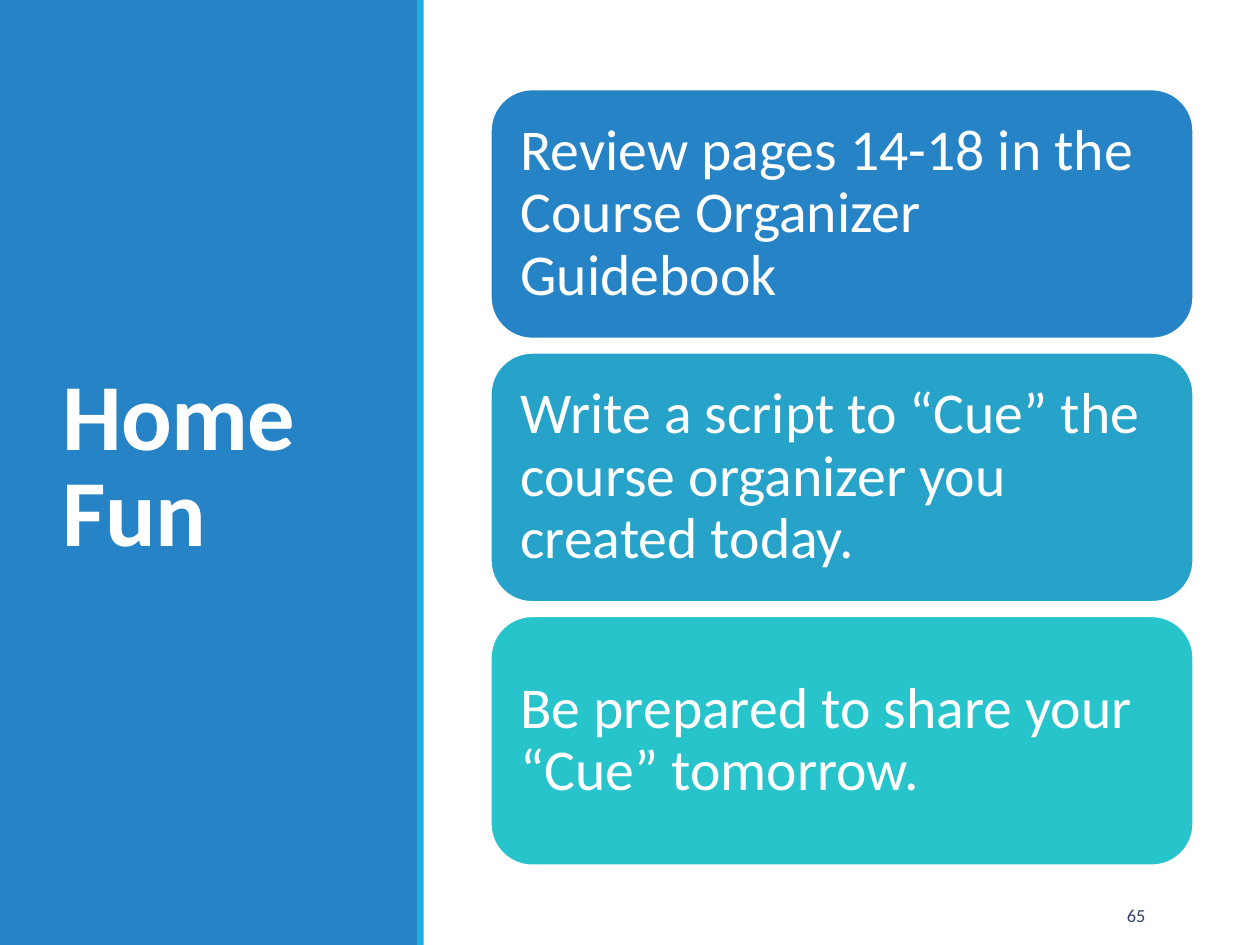
from pptx import Presentation
from pptx.dml.color import RGBColor
from pptx.enum import shapes, text
from pptx.util import Cm, Pt

WHITE = RGBColor(0xFF, 0xFF, 0xFF)
BLUE = RGBColor(0x26, 0x83, 0xC6)
SKY = RGBColor(0x1C, 0xAD, 0xE4)
TEAL = RGBColor(0x27, 0xA3, 0xC9)
AQUA = RGBColor(0x28, 0xC4, 0xCC)
NAVY = RGBColor(0x34, 0x40, 0x68)

PAGE_HEIGHT = 19.05
CARD_TOP, CARD_PITCH = 1.8, 5.31
CARDS = [
    ("Review pages 14-18 in the Course Organizer Guidebook", BLUE),
    ("Write a script to “Cue” the course organizer you created today.", TEAL),
    ("Be prepared to share your “Cue” tomorrow.", AQUA),
]


def add_filled_shape(page, kind, left, top, width, height, color):
    shape = page.shapes.add_shape(kind, Cm(left), Cm(top), Cm(width), Cm(height))
    shape.shadow.inherit = False
    shape.fill.solid()
    shape.fill.fore_color.rgb = color
    shape.line.fill.background()
    return shape


def write(box, words, size, color, align=text.PP_ALIGN.LEFT, line_spacing=1.0):
    """Set one vertically centred, wrapping paragraph and return its run."""
    frame = box.text_frame
    frame.text = words
    frame.word_wrap = True
    frame.vertical_anchor = text.MSO_ANCHOR.MIDDLE
    para = frame.paragraphs[0]
    para.alignment = align
    para.line_spacing = line_spacing
    span = para.runs[0]
    span.font.name = "Calibri"
    span.font.size = Pt(size)
    span.font.color.rgb = color
    return span


def add_side_panel(page):
    rectangle = shapes.MSO_SHAPE.RECTANGLE
    add_filled_shape(page, rectangle, 0, 0, 8.43, PAGE_HEIGHT, BLUE)
    add_filled_shape(page, rectangle, 8.41, 0, 0.13, PAGE_HEIGHT, SKY)


def add_title(page, words):
    box = page.shapes.add_textbox(Cm(1.02), Cm(1.45), Cm(6.43), Cm(16.03))
    span = write(box, words, 54, WHITE, line_spacing=0.85)
    span.font.bold = True
    span.font._element.set("spc", "-50")


def add_card(page, top, words, color):
    card = add_filled_shape(page, shapes.MSO_SHAPE.ROUNDED_RECTANGLE,
                            9.89, top, 14.17, 5.03, color)
    card.line.color.rgb = WHITE
    card.line.width = Pt(1.25)
    frame = card.text_frame
    frame.margin_left = frame.margin_right = Cm(0.36)
    frame.margin_top = frame.margin_bottom = Cm(0.36)
    write(card, words, 33, WHITE, line_spacing=0.9)


def add_page_number(page, number):
    box = page.shapes.add_textbox(Cm(21.08), Cm(17.93), Cm(2.26), Cm(1.02))
    write(box, number, 10.5, NAVY, align=text.PP_ALIGN.RIGHT)


def main():
    deck = Presentation()
    deck.slide_width, deck.slide_height = Cm(25.4), Cm(PAGE_HEIGHT)
    page = deck.slides.add_slide(deck.slide_layouts[6])
    add_side_panel(page)
    add_title(page, "Home Fun")
    add_page_number(page, "65")
    for index, (words, color) in enumerate(CARDS):
        add_card(page, CARD_TOP + index * CARD_PITCH, words, color)
    deck.save("out.pptx")


if __name__ == "__main__":
    main()
